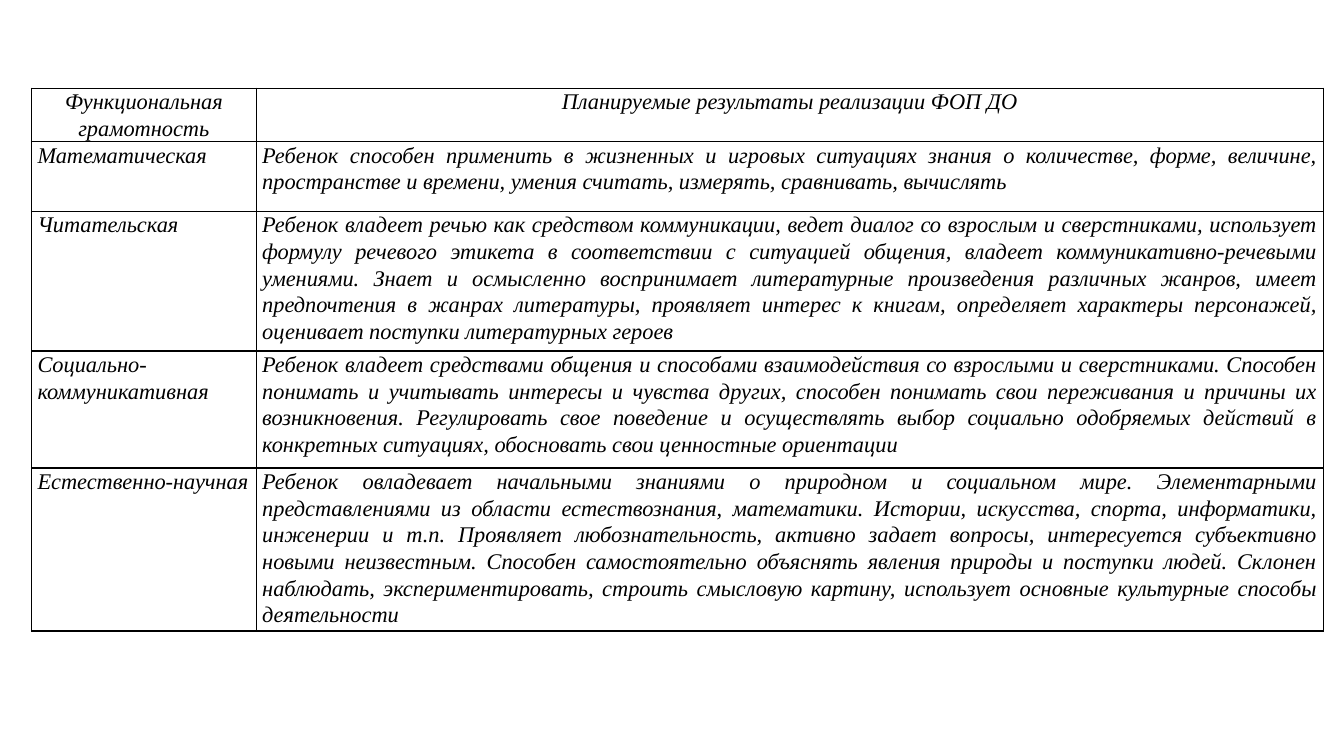
from lxml.etree import SubElement
from pptx import Presentation
from pptx.dml.color import RGBColor
from pptx.enum.text import PP_ALIGN
from pptx.oxml.ns import qn
from pptx.util import Pt

COLORS = {"text": "000000", "border": "000000"}
FONT = "Times New Roman"
COLUMN_WIDTHS = (160.5, 762.2)
ROW_HEIGHTS = (37.6, 49.8, 100, 83.5, 116.5)
ROWS = (
    ("Функциональная грамотность", "Планируемые результаты реализации ФОП ДО"),
    (
        "Математическая",
        "Ребенок способен применить в жизненных и игровых ситуациях знания о количестве, "
        "форме, величине, пространстве и времени, умения считать, измерять, сравнивать, вычислять",
    ),
    (
        "Читательская",
        "Ребенок владеет речью как средством коммуникации, ведет диалог со взрослым и "
        "сверстниками, использует формулу речевого этикета в соответствии с ситуацией общения, "
        "владеет коммуникативно-речевыми умениями. Знает и осмысленно воспринимает литературные "
        "произведения различных жанров, имеет предпочтения в жанрах литературы, проявляет интерес "
        "к книгам, определяет характеры персонажей, оценивает поступки литературных героев",
    ),
    (
        "Социально-коммуникативная",
        "Ребенок владеет средствами общения и способами взаимодействия со взрослыми и "
        "сверстниками. Способен понимать и учитывать интересы и чувства других, способен понимать "
        "свои переживания и причины их возникновения. Регулировать свое поведение и осуществлять "
        "выбор социально одобряемых действий в конкретных ситуациях, обосновать свои ценностные "
        "ориентации",
    ),
    (
        "Естественно-научная",
        "Ребенок овладевает начальными знаниями о природном и социальном мире. Элементарными "
        "представлениями из области естествознания, математики. Истории, искусства, спорта, "
        "информатики, инженерии и т.п. Проявляет любознательность, активно задает вопросы, "
        "интересуется субъективно новыми неизвестным. Способен самостоятельно объяснять явления "
        "природы и поступки людей. Склонен наблюдать, экспериментировать, строить смысловую "
        "картину, использует основные культурные способы деятельности",
    ),
)


def write_text(text_frame, text, align=PP_ALIGN.JUSTIFY, size=16, italic=True, color="text"):
    paragraph = text_frame.paragraphs[0]
    paragraph.alignment = align
    paragraph.line_spacing = 1.07
    run = paragraph.add_run()
    run.text = text
    run.font.name = FONT
    run.font.size = Pt(size)
    run.font.bold = False
    run.font.italic = italic
    run.font.color.rgb = RGBColor.from_string(COLORS[color])


def draw_borders(cell, width=1):
    properties = cell._tc.get_or_add_tcPr()
    for side in ("a:lnL", "a:lnR", "a:lnT", "a:lnB"):
        line = SubElement(properties, qn(side), w=str(Pt(width)))
        fill = SubElement(line, qn("a:solidFill"))
        SubElement(fill, qn("a:srgbClr"), val=COLORS["border"])


def format_cell(cell):
    cell.margin_left = cell.margin_right = Pt(4.3)
    cell.margin_top = cell.margin_bottom = Pt(0)
    draw_borders(cell)
    cell.fill.background()


def add_literacy_table(slide, left, top, width, height):
    frame = slide.shapes.add_table(
        len(ROWS), len(COLUMN_WIDTHS), Pt(left), Pt(top), Pt(width), Pt(height)
    )
    table = frame.table
    table.horz_banding = False
    table.first_row = False
    for column, column_width in zip(table.columns, COLUMN_WIDTHS):
        column.width = Pt(width * column_width / sum(COLUMN_WIDTHS))
    for row, row_height in zip(table.rows, ROW_HEIGHTS):
        row.height = Pt(height * row_height / sum(ROW_HEIGHTS))
    for row_index, texts in enumerate(ROWS):
        align = PP_ALIGN.JUSTIFY if row_index else PP_ALIGN.CENTER
        for column_index, text in enumerate(texts):
            cell = table.cell(row_index, column_index)
            format_cell(cell)
            write_text(cell.text_frame, text, align=align)


def main():
    presentation = Presentation()
    presentation.slide_width = Pt(960)
    presentation.slide_height = Pt(540)
    slide = presentation.slides.add_slide(presentation.slide_layouts[6])
    add_literacy_table(
        slide, left=22.5, top=63, width=sum(COLUMN_WIDTHS), height=sum(ROW_HEIGHTS)
    )
    presentation.save("out.pptx")


if __name__ == "__main__":
    main()
